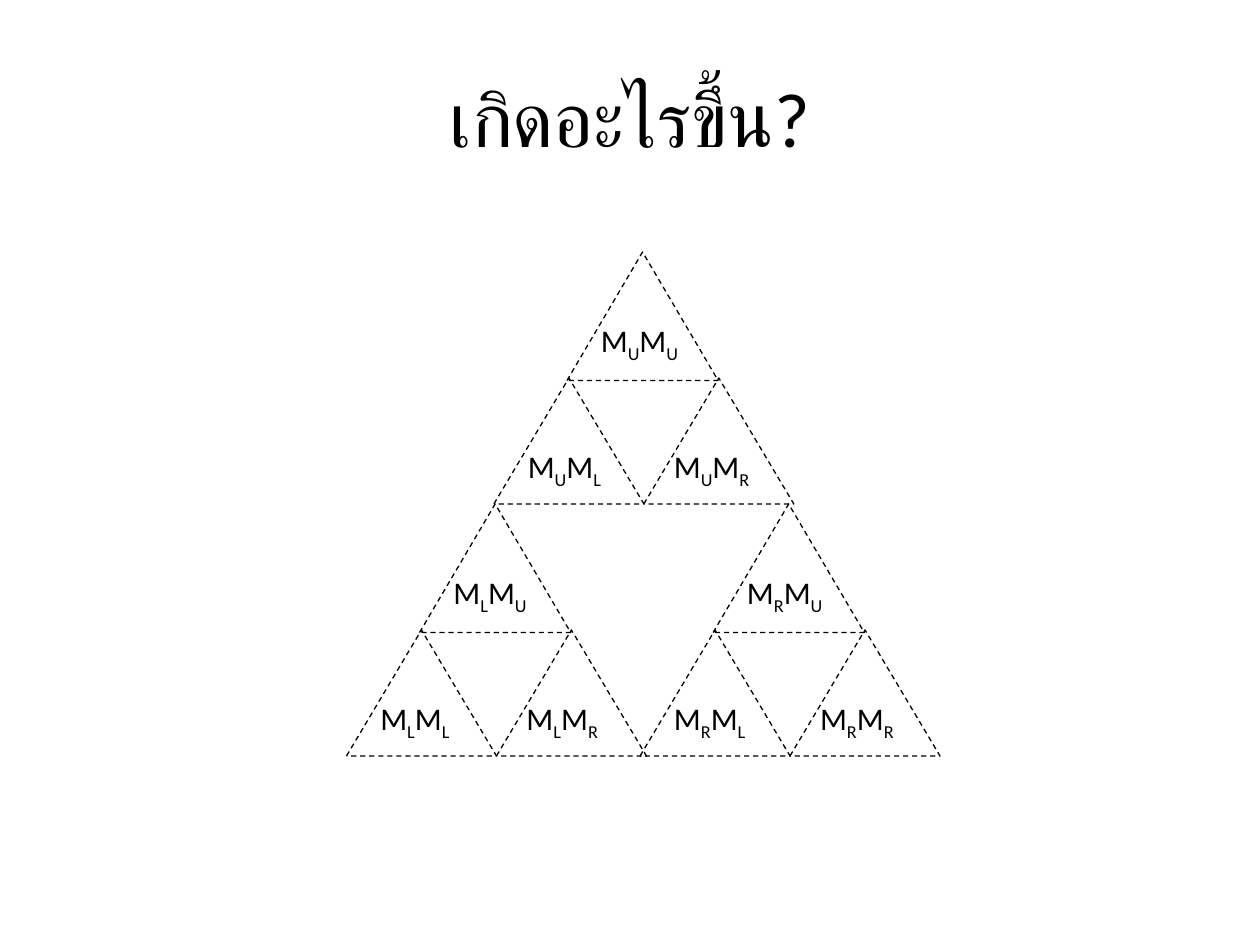
from dataclasses import dataclass

from pptx import Presentation
from pptx.dml.color import RGBColor
from pptx.enum.dml import MSO_LINE
from pptx.enum.shapes import MSO_SHAPE
from pptx.enum.text import MSO_ANCHOR, MSO_AUTO_SIZE, PP_ALIGN
from pptx.util import Inches, Pt

TRIANGLE = MSO_SHAPE.ISOSCELES_TRIANGLE
DASH = MSO_LINE.DASH
MIDDLE = MSO_ANCHOR.MIDDLE
FIT_SHAPE = MSO_AUTO_SIZE.SHAPE_TO_FIT_TEXT
CENTER = PP_ALIGN.CENTER


@dataclass(frozen=True)
class Theme:
    font: str = "Calibri"
    ink: RGBColor = RGBColor(0, 0, 0)
    title_size: int = 44
    label_size: int = 18
    line_width: float = 0.75
    subscript: str = "-25000"


THEME = Theme()
TITLE = "เกิดอะไรขึ้น?"

# Left and top of each large triangle, by the map that makes it
LARGE = {"U": (3.92, 2), "L": (2.75, 4), "R": (5.08, 4)}
# Left, top, width and height of each small triangle within a large one
SMALL = {
    "R": (1.19, 1, 1.19, 1),
    "L": (0, 1, 1.19, 1),
    "U": (0.58, 0, 1.2, 1.02),
}
LABEL_LEFT = {"U": 0.75, "L": 0.17, "R": 1.33}
LABEL_DROP = 0.5
LABEL_HEIGHT = 0.4
LETTER_WIDTH = {"U": 0.11, "L": 0.07, "R": 0.09}
LABEL_BASE_WIDTH = 0.63


def add_text(page, left, top, width, height):
    return page.shapes.add_textbox(
        Inches(left), Inches(top), Inches(width), Inches(height)
    )


def style_span(span, size):
    span.font.name = THEME.font
    span.font.size = Pt(size)
    span.font.color.rgb = THEME.ink


def add_title(page):
    frame = add_text(page, 0.5, 0.3, 9, 1.25).text_frame
    frame.word_wrap = True
    frame.vertical_anchor = MIDDLE
    frame.text = TITLE
    para = frame.paragraphs[0]
    para.alignment = CENTER
    style_span(para.runs[0], THEME.title_size)


def add_triangle(page, left, top, width, height):
    triangle = page.shapes.add_shape(
        TRIANGLE, Inches(left), Inches(top), Inches(width), Inches(height)
    )
    triangle.shadow.inherit = False
    triangle.fill.background()
    triangle.line.color.rgb = THEME.ink
    triangle.line.width = Pt(THEME.line_width)
    triangle.line.dash_style = DASH


def add_label(page, left, top, letters):
    """Write one M with a subscript for each letter."""
    width = LABEL_BASE_WIDTH + sum(LETTER_WIDTH[letter] for letter in letters)
    frame = add_text(page, left, top, width, LABEL_HEIGHT).text_frame
    frame.word_wrap = False
    frame.auto_size = FIT_SHAPE
    para = frame.paragraphs[0]
    for letter in letters:
        for text in ("M", letter):
            span = para.add_run()
            span.text = text
            style_span(span, THEME.label_size)
        span.font._element.set("baseline", THEME.subscript)


def main():
    deck = Presentation()
    deck.slide_width, deck.slide_height = Inches(10), Inches(7.5)
    page = deck.slides.add_slide(deck.slide_layouts[6])
    add_title(page)
    for outer, (left, top) in LARGE.items():
        for inner, (dx, dy, width, height) in SMALL.items():
            add_triangle(page, left + dx, top + dy, width, height)
            add_label(page, left + LABEL_LEFT[inner], top + dy + LABEL_DROP, outer + inner)
    deck.save("out.pptx")


if __name__ == "__main__":
    main()
